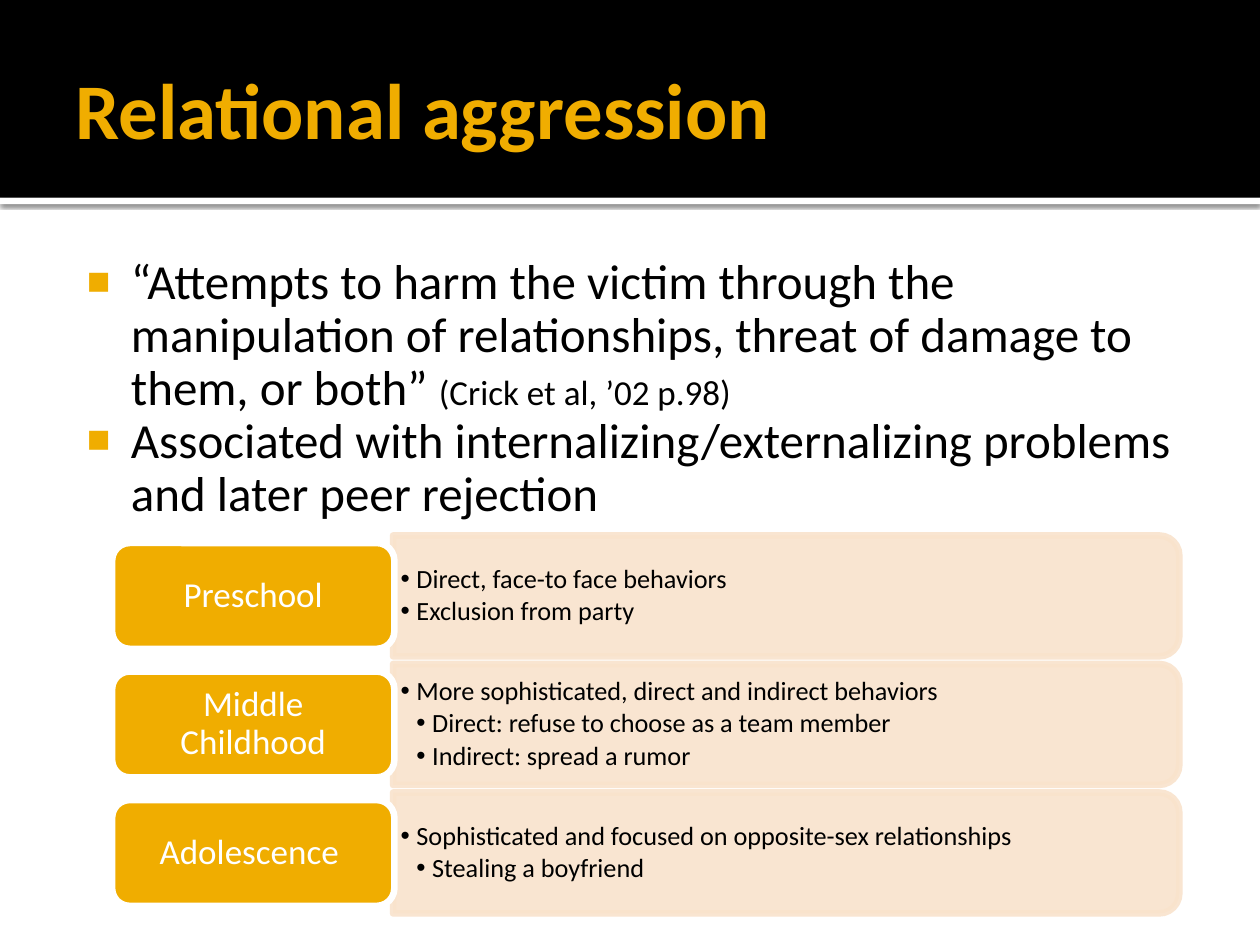
from lxml import etree
from pptx import Presentation
from pptx.dml.color import RGBColor
from pptx.enum import shapes, text
from pptx.oxml.ns import qn
from pptx.util import Inches, Pt

FONT = "Calibri"
GOLD, CREAM, BLACK, WHITE = "F0AD00", "F9E3CC", "000000", "FFFFFF"

TITLE = "Relational aggression"
# Each bullet is a list of (text, size) runs
BULLETS = [
    [("“Attempts to harm the victim through the manipulation of relationships, "
      "threat of damage to them, or both” ", 28), ("(Crick et al, ’02 p.98)", 20)],
    [("Associated with internalizing/externalizing problems and later peer rejection", 28)],
]
# Stage name, then (level, behavior) lines
STAGES = [
    ("Preschool", [(1, "Direct, face-to face behaviors"), (1, "Exclusion from party")]),
    ("Middle Childhood", [(1, "More sophisticated, direct and indirect behaviors"),
                          (2, "Direct: refuse to choose as a team member"),
                          (2, "Indirect: spread a rumor")]),
    ("Adolescence ", [(1, "Sophisticated and focused on opposite-sex relationships"),
                      (2, "Stealing a boyfriend")]),
]
ROW_TOP, ROW_STEP = 4.25, 1.02
PANEL_LEFT, PANEL_W, PANEL_H = 3.12, 6.24, 0.96
LABEL_LEFT, LABEL_W, LABEL_H = 0.89, 2.24, 0.84
PANEL_TEXT_W, PANEL_TEXT_H = 6.19, 0.87


def rgb(color):
    return RGBColor.from_string(color)


def add_child(parent, tag, **attrs):
    return etree.SubElement(parent, qn(tag), {k: str(v) for k, v in attrs.items()})


def add_box(s, kind, left, top, width, height, fill, line=None):
    sp = s.shapes.add_shape(kind, Inches(left), Inches(top), Inches(width), Inches(height))
    sp.shadow.inherit = False
    sp.fill.solid()
    sp.fill.fore_color.rgb = rgb(fill)
    if line:
        sp.line.color.rgb = rgb(line)
        sp.line.width = Pt(3.78)
    else:
        sp.line.fill.background()
    return sp


def add_text(s, left, top, width, height):
    return s.shapes.add_textbox(Inches(left), Inches(top), Inches(width), Inches(height))


def set_frame(sp, insets, anchor=text.MSO_ANCHOR.MIDDLE):
    """Wrap the text, set left, top, right and bottom insets, and return the frame."""
    tf = sp.text_frame
    tf.word_wrap = True
    tf.vertical_anchor = anchor
    tf.margin_left, tf.margin_top, tf.margin_right, tf.margin_bottom = map(Inches, insets)
    return tf


def add_paragraph(tf, index, runs, color, spacing=None, after=0):
    p = tf.paragraphs[0] if index == 0 else tf.add_paragraph()
    p.font.name = FONT
    p.font.color.rgb = rgb(color)
    p.line_spacing = spacing
    p.space_after = Pt(after)
    for words, size in runs:
        r = p.add_run()
        r.text = words
        r.font.size = Pt(size)
    return p


def set_bullet(p, char, margin, hanging, color=None, percent=100):
    pPr = p._p.get_or_add_pPr()
    pPr.set("marL", str(Inches(margin)))
    pPr.set("indent", str(-Inches(hanging)))
    marks = []
    if color:
        clr = etree.Element(qn("a:buClr"))
        add_child(clr, "a:srgbClr", val=color)
        marks.append(clr)
    marks.append(etree.Element(qn("a:buSzPct"), val=str(percent * 1000)))
    marks.append(etree.Element(qn("a:buFont"), typeface="Arial"))
    marks.append(etree.Element(qn("a:buChar"), char=char))
    default = pPr.find(qn("a:defRPr"))
    for mark in marks:
        default.addprevious(mark)


def add_header(s):
    strip = add_box(s, shapes.MSO_SHAPE.RECTANGLE, 0, 1.57, 10, 0.05, WHITE)
    effects = strip._element.spPr.find(qn("a:effectLst"))
    shadow = add_child(effects, "a:outerShdw", blurRad=Pt(2.5), dist=Pt(0.8),
                       dir=90 * 60000, algn="t", rotWithShape=0)
    add_child(add_child(shadow, "a:srgbClr", val=BLACK), "a:alpha", val=60000)
    add_box(s, shapes.MSO_SHAPE.RECTANGLE, 0, 0, 10, 1.57, BLACK)
    tf = set_frame(add_text(s, 0.5, 0.17, 9, 1.37), (0.1, 0.05, 0.05, 0.05))
    add_paragraph(tf, 0, [(TITLE, 45)], GOLD).font.bold = True


def add_bullets(s):
    tf = set_frame(add_text(s, 0.5, 1.94, 9, 2.3), (0.06, 0.1, 0.1, 0.05),
                   text.MSO_ANCHOR.TOP)
    for i, runs in enumerate(BULLETS):
        p = add_paragraph(tf, i, runs, BLACK, 0.9)
        set_bullet(p, "■", 0.48, 0.35, GOLD, 80)


def add_stage(s, top, name, lines):
    middle = top + PANEL_H / 2
    # The panel is drawn upright and turned so its round corners face right
    panel = add_box(s, shapes.MSO_SHAPE.ROUND_2_SAME_RECTANGLE,
                    PANEL_LEFT + (PANEL_W - PANEL_H) / 2, middle - PANEL_W / 2,
                    PANEL_H, PANEL_W, CREAM, CREAM)
    panel.rotation = 90
    for clr in panel._element.spPr.iter(qn("a:srgbClr")):
        add_child(clr, "a:alpha", val=90000)

    box = add_text(s, PANEL_LEFT, middle - PANEL_TEXT_H / 2, PANEL_TEXT_W, PANEL_TEXT_H)
    tf = set_frame(box, (0.06, 0.03, 0.06, 0.03))
    for i, (level, words) in enumerate(lines):
        p = add_paragraph(tf, i, [(words, 15)], BLACK, 0.9, 2.25)
        p.level = level
        set_bullet(p, "•", 0.125 * level, 0.125)

    label = add_box(s, shapes.MSO_SHAPE.ROUNDED_RECTANGLE, LABEL_LEFT,
                    middle - LABEL_H / 2, LABEL_W, LABEL_H, GOLD, WHITE)
    tf = set_frame(label, (0.12, 0.08, 0.12, 0.08))
    p = add_paragraph(tf, 0, [(name, 20)], WHITE, 0.9, 7)
    p.alignment = text.PP_ALIGN.CENTER


def main():
    prs = Presentation()
    prs.slide_width, prs.slide_height = Inches(10), Inches(7.5)
    s = prs.slides.add_slide(prs.slide_layouts[6])
    add_header(s)
    add_bullets(s)
    for row, (name, lines) in enumerate(STAGES):
        add_stage(s, ROW_TOP + row * ROW_STEP, name, lines)
    prs.save("out.pptx")


if __name__ == "__main__":
    main()
